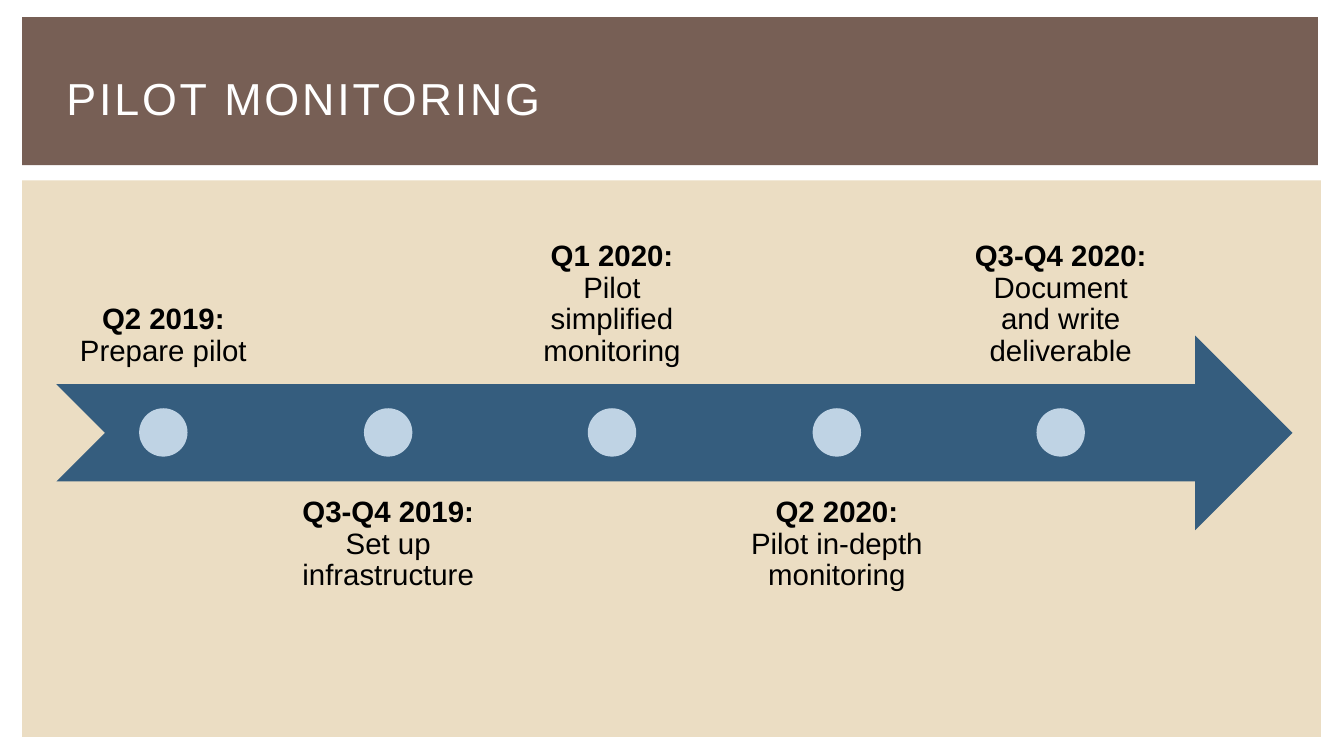
import dataclasses

import pptx
import pptx.dml.color
import pptx.enum.shapes
import pptx.enum.text
import pptx.util

SHAPE = pptx.enum.shapes.MSO_SHAPE
ALIGN = pptx.enum.text.PP_ALIGN
ANCHOR = pptx.enum.text.MSO_ANCHOR
EMU_PER_PX = 9144  # 100 px to the inch


@dataclasses.dataclass(frozen=True)
class Theme:
    font: str = "Arial"
    title_size: int = 32
    label_size: int = 21
    banner: str = "775F55"
    panel: str = "EBDDC3"
    arrow: str = "355D7E"
    dot: str = "BFD3E4"
    title_text: str = "FFFFFF"
    label_text: str = "000000"


def px(*lengths):
    return [pptx.util.Emu(length * EMU_PER_PX) for length in lengths]


class SlideBuilder:
    def __init__(self, slide, theme):
        self.slide = slide
        self.theme = theme

    def shape(self, kind, box, color):
        shape = self.slide.shapes.add_shape(kind, *px(*box))
        shape.shadow.inherit = False
        shape.fill.solid()
        shape.fill.fore_color.rgb = pptx.dml.color.RGBColor.from_string(color)
        shape.line.fill.background()

    def text(self, box, wording, size, color, anchor):
        frame = self.slide.shapes.add_textbox(*px(*box)).text_frame
        frame.word_wrap = True
        frame.vertical_anchor = anchor
        frame.text = wording
        for run in frame.paragraphs[0].runs:
            run.font.name = self.theme.font
            run.font.size = pptx.util.Pt(size)
            run.font.color.rgb = pptx.dml.color.RGBColor.from_string(color)
        return frame

    def title(self, box, wording):
        frame = self.text(box, wording, self.theme.title_size,
                          self.theme.title_text, ANCHOR.MIDDLE)
        # Letter spacing of 2 pt
        frame.paragraphs[0].runs[0]._r.get_or_add_rPr().set("spc", "200")

    def milestone_label(self, box, period, task, anchor):
        frame = self.text(box, f"{period}\v{task}", self.theme.label_size,
                          self.theme.label_text, anchor)
        (inset,) = px(16)
        frame.margin_left = frame.margin_right = inset
        frame.margin_top = frame.margin_bottom = inset
        paragraph = frame.paragraphs[0]
        paragraph.alignment = ALIGN.CENTER
        paragraph.line_spacing = 0.9
        paragraph.runs[0].font.bold = True


MILESTONES = [
    ("Q2 2019:", "Prepare pilot"),
    ("Q3-Q4 2019:", "Set up infrastructure"),
    ("Q1 2020:", "Pilot simplified monitoring"),
    ("Q2 2020:", "Pilot in-depth monitoring"),
    ("Q3-Q4 2020:", "Document and write deliverable"),
]


def main():
    deck = pptx.Presentation()
    deck.slide_width, deck.slide_height = px(1333, 750)
    theme = Theme()
    builder = SlideBuilder(deck.slides.add_slide(deck.slide_layouts[6]), theme)

    # Banner, panel and title
    builder.shape(SHAPE.RECTANGLE, (22, 17, 1285, 147), theme.banner)
    builder.shape(SHAPE.RECTANGLE, (22, 179, 1288, 552), theme.panel)
    builder.title((56, 39, 1222, 115), "PILOT MONITORING")

    # Timeline arrow with milestones alternating above and below
    builder.shape(SHAPE.NOTCHED_RIGHT_ARROW, (56, 333, 1226, 193), theme.arrow)
    for index, (period, task) in enumerate(MILESTONES):
        left = 56 + (index * 445 + 1) // 2
        top, anchor = (477, ANCHOR.TOP) if index % 2 else (188, ANCHOR.BOTTOM)
        builder.milestone_label((left, top, 212, 193), period, task, anchor)
        builder.shape(SHAPE.OVAL, (left + 82, 405, 48, 48), theme.dot)

    deck.save("out.pptx")


if __name__ == "__main__":
    main()
